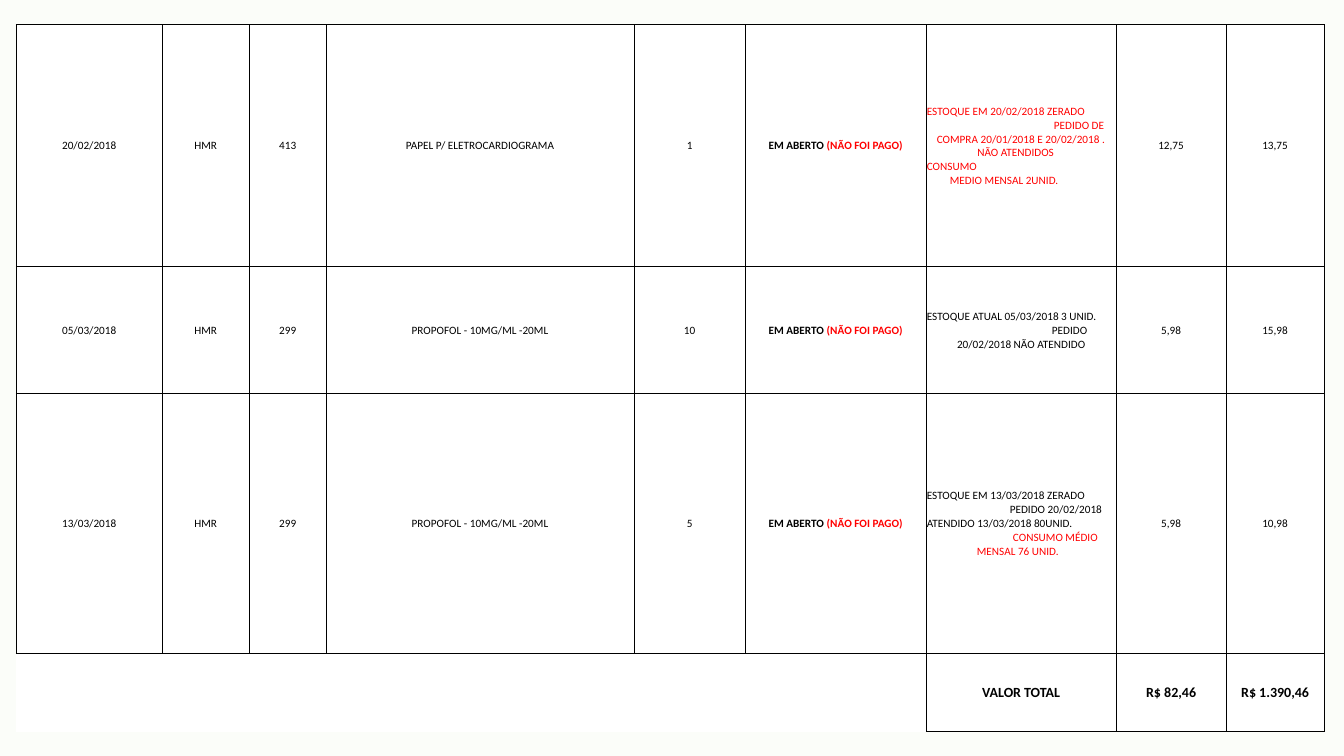
from lxml.etree import SubElement
from pptx import Presentation
from pptx.dml.color import RGBColor
from pptx.enum.shapes import MSO_SHAPE as Shape
from pptx.enum.text import MSO_ANCHOR as Anchor, PP_ALIGN as Align
from pptx.oxml import parse_xml
from pptx.oxml.ns import nsdecls, qn
from pptx.util import Cm, Pt

BLACK, RED, WHITE = "000000", "FF0000", "FFFFFF"
WIDTHS = [3.68, 2.19, 1.94, 7.76, 2.8, 4.56, 4.79, 2.77, 2.47]
HEIGHTS = [6.1, 3.2, 6.53, 1.99]
STATUS = 5
NOTE = 6

ORDERS = [
    ["20/02/2018", "HMR", "413", "PAPEL P/ ELETROCARDIOGRAMA", "1", "12,75", "13,75"],
    ["05/03/2018", "HMR", "299", "PROPOFOL - 10MG/ML -20ML", "10", "5,98", "15,98"],
    ["13/03/2018", "HMR", "299", "PROPOFOL - 10MG/ML -20ML", "5", "5,98", "10,98"],
]
NOTES = [
    [
        ([0], RED, "ESTOQUE EM 20/02/2018 ZERADO"),
        ([3.2], RED, "PEDIDO DE"),
        ([0.25], RED, "COMPRA 20/01/2018 E 20/02/2018 ."),
        ([0.3, 3.17], RED, "\tNÃO ATENDIDOS\tCONSUMO"),
        ([0.58], RED, "MEDIO MENSAL 2UNID."),
    ],
    [
        ([0], BLACK, "ESTOQUE ATUAL 05/03/2018 3 UNID."),
        ([3.15], BLACK, "PEDIDO"),
        ([0.76], BLACK, "20/02/2018 NÃO ATENDIDO"),
    ],
    [
        ([0], BLACK, "ESTOQUE EM 13/03/2018 ZERADO"),
        ([2.09], BLACK, "PEDIDO 20/02/2018"),
        ([0], BLACK, "ATENDIDO 13/03/2018 80UNID."),
        ([2.17], RED, "CONSUMO MÉDIO"),
        ([1.26], RED, "MENSAL 76 UNID."),
    ],
]
TOTALS = ["VALOR TOTAL", "R$ 82,46", "R$ 1.390,46"]


def tint(code):
    return RGBColor.from_string(code)


class Page:
    font = "Calibri"
    size = 8

    def __init__(self, deck):
        self.deck = deck
        self.slide = deck.slides.add_slide(deck.slide_layouts[6])

    def wash(self, color, alpha):
        rect = self.slide.shapes.add_shape(
            Shape.RECTANGLE, 0, 0, self.deck.slide_width, self.deck.slide_height)
        rect.shadow.inherit = False
        rect.line.fill.background()
        rect.fill.solid()
        rect.fill.fore_color.rgb = tint(color)
        node = next(rect._element.spPr.iter(qn("a:srgbClr")))
        SubElement(node, qn("a:alpha")).set("val", str(alpha * 1000))

    def grid(self, left, top, widths, heights):
        table = self.slide.shapes.add_table(
            len(heights), len(widths), Cm(left), Cm(top),
            Cm(sum(widths)), Cm(sum(heights))).table
        table.first_row = table.horz_banding = False
        for col, width in zip(table.columns, widths):
            col.width = Cm(width)
        for row, height in zip(table.rows, heights):
            row.height = Cm(height)
        return table

    def cell(self, cell, edges="LRTB"):
        cell.fill.solid()
        cell.fill.fore_color.rgb = tint(WHITE)
        cell.vertical_anchor = Anchor.MIDDLE
        cell.margin_left = cell.margin_right = cell.margin_top = Cm(0.02)
        cell.margin_bottom = 0
        props = cell._tc.get_or_add_tcPr()
        for spot, side in enumerate("LRTB"):
            paint = "<a:noFill/>"
            if side in edges:
                paint = f'<a:solidFill><a:srgbClr val="{BLACK}"/></a:solidFill>'
            props.insert(spot, parse_xml(
                f'<a:ln{side} {nsdecls("a")} w="{Pt(0.5)}">{paint}</a:ln{side}>'))

    def style(self, run, color=BLACK, bold=False, size=None):
        font = run.font
        font.name = self.font
        font.size = Pt(size or self.size)
        font.bold = bold
        font.color.rgb = tint(color)

    def label(self, cell, text, bold=False, size=None):
        para = cell.text_frame.paragraphs[0]
        para.text = text
        para.alignment = Align.CENTER
        self.style(para.runs[0], bold=bold, size=size)
        return para

    def status(self, cell):
        para = self.label(cell, "EM ABERTO ", bold=True)
        run = para.add_run()
        run.text = "(NÃO FOI PAGO)"
        self.style(run, RED, bold=True)

    def note(self, cell, lines):
        frame = cell.text_frame
        frame.text = "\n".join(text for _, _, text in lines)
        for para, (stops, color, _) in zip(frame.paragraphs, lines):
            para.alignment = Align.LEFT
            props = para._p.get_or_add_pPr()
            props.set("indent", "0")
            if len(stops) == 1:
                props.set("marL", str(Cm(stops[0])))
            else:
                tabs = SubElement(props, qn("a:tabLst"))
                for stop in stops:
                    tab = SubElement(tabs, qn("a:tab"))
                    tab.set("pos", str(Cm(stop)))
                    tab.set("algn", "l")
            for run in para.runs:
                self.style(run, color)


def main():
    deck = Presentation()
    deck.slide_width, deck.slide_height = Cm(33.87), Cm(19.05)
    page = Page(deck)
    page.wash("F7FCF2", 44)
    table = page.grid(0.41, 0.62, WIDTHS, HEIGHTS)
    last = len(ORDERS)
    for row in range(len(HEIGHTS)):
        for col in range(len(WIDTHS)):
            edges = "LRTB"
            if row == last and col < NOTE:
                edges = "TR" if col == STATUS else "T"
            page.cell(table.cell(row, col), edges)
    plain = [col for col in range(len(WIDTHS)) if col not in (STATUS, NOTE)]
    for row, (order, lines) in enumerate(zip(ORDERS, NOTES)):
        for col, text in zip(plain, order):
            page.label(table.cell(row, col), text)
        page.status(table.cell(row, STATUS))
        page.note(table.cell(row, NOTE), lines)
    for col, text in enumerate(TOTALS, NOTE):
        page.label(table.cell(last, col), text, bold=True, size=10)
    deck.save("out.pptx")


if __name__ == "__main__":
    main()
